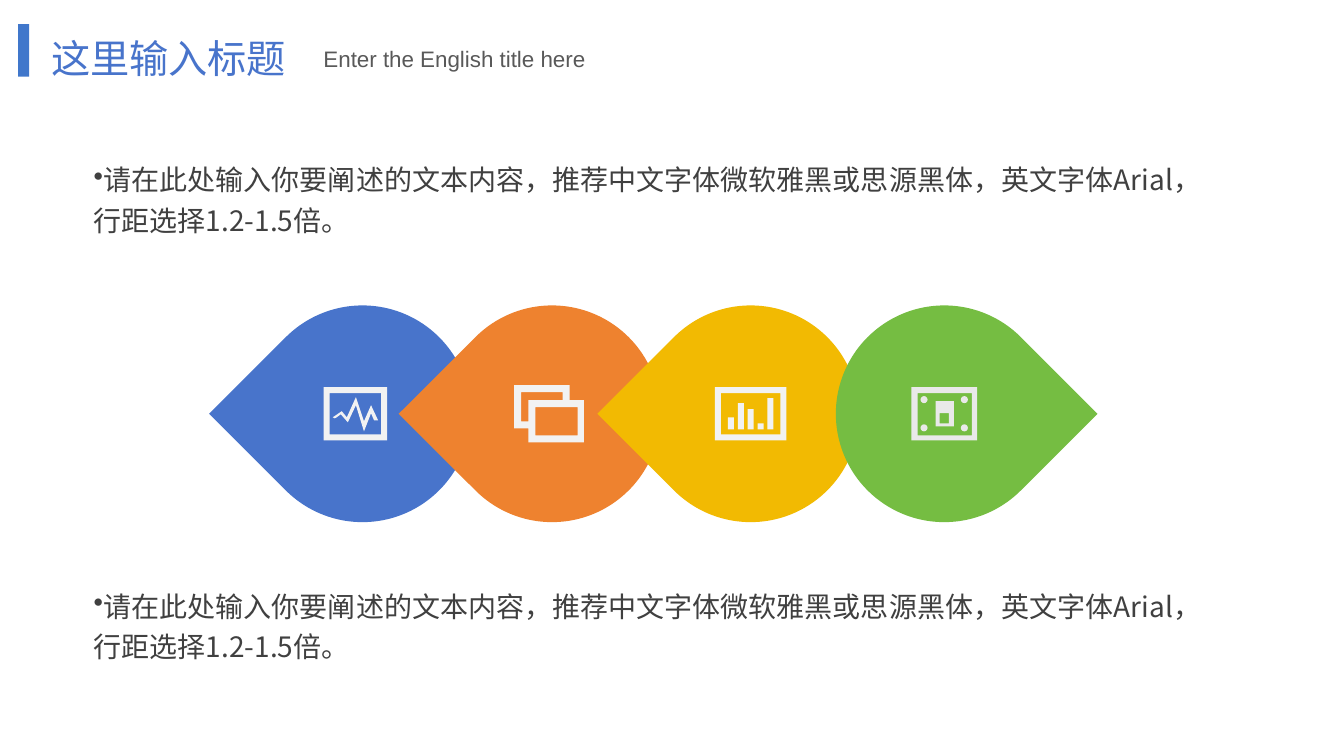
import pptx
import pptx.util
import pptx.dml.color
import pptx.enum.shapes
import pptx.enum.text
import pptx.oxml
import pptx.oxml.ns
from lxml import etree

Inches = pptx.util.Inches
RGBColor = pptx.dml.color.RGBColor
KIND = pptx.enum.shapes.MSO_SHAPE
qn = pptx.oxml.ns.qn

BAR = RGBColor(0x00, 0x4A, 0xBA)
BLUE = RGBColor(0x48, 0x74, 0xCB)
ORANGE = RGBColor(0xEE, 0x82, 0x2F)
YELLOW = RGBColor(0xF2, 0xBA, 0x02)
GREEN = RGBColor(0x75, 0xBD, 0x42)
WHITE = RGBColor(0xF2, 0xF2, 0xF2)
PALE = RGBColor(0xE9, 0xE9, 0xE9)
DARK = RGBColor(0x40, 0x40, 0x40)
GRAY = RGBColor(0x59, 0x59, 0x59)
CJK = "Noto Sans CJK SC"

deck = pptx.Presentation()
deck.slide_width = Inches(13.33)
deck.slide_height = Inches(7.5)
slide = deck.slides.add_slide(deck.slide_layouts[6])
shapes = slide.shapes


def write(text, left, top, width, height, size, color, font=CJK,
          line=None, bullet=None):
    box = shapes.add_textbox(*map(Inches, (left, top, width, height)))
    frame = box.text_frame
    frame.word_wrap = True
    frame.vertical_anchor = pptx.enum.text.MSO_ANCHOR.TOP
    para = frame.paragraphs[0]
    if line:
        para.line_spacing = line
    if bullet:
        props = para._p.get_or_add_pPr()
        props.set("marL", "0")
        props.set("indent", "0")
        etree.SubElement(props, qn("a:buChar"), char=bullet)
    run = para.add_run()
    run.text = text
    run.font.size = pptx.util.Pt(size)
    run.font.name = font
    run.font.color.rgb = color
    etree.SubElement(run._r.get_or_add_rPr(), qn("a:ea"), typeface=font)


def ring(left, top, right, base, edge):
    """Corner points of a frame's outer and inner rectangles."""
    return [[(l, t), (l, b), (r, b), (r, t)] for l, t, r, b in (
        (left, top, right, base),
        (left + edge, top + edge, right - edge, base - edge))]


# Title bar, drops, chart bars and screws: kind, place, colour, turn
solids = [(KIND.RECTANGLE, 0.18, 0.24, 0.11, 0.52, BAR, 0)]
for left, color, turn in ((2.52, BLUE, 225), (4.4, ORANGE, 225),
                          (6.37, YELLOW, 225), (8.29, GREEN, 45)):
    solids.append((KIND.TEAR, left, 3.03, 2.15, 2.15, color, turn))
for i, tall in enumerate((0.12, 0.26, 0.2, 0.06, 0.31)):
    solids.append((KIND.RECTANGLE, 7.22 + 0.098 * i, 4.26 - tall,
                   0.06, tall, WHITE, 0))
for left in (9.13, 9.53):
    for top in (3.93, 4.21):
        solids.append((KIND.OVAL, left, top, 0.07, 0.07, PALE, 0))

for kind, left, top, width, height, color, turn in solids:
    part = shapes.add_shape(kind, *map(Inches, (left, top, width, height)))
    part.shadow.inherit = False
    part.rotation = turn
    part.fill.solid()
    part.fill.fore_color.rgb = color
    part.line.fill.background()
    if color == BAR:
        tint = part.fill._xPr.find(".//" + qn("a:srgbClr"))
        etree.SubElement(tint, qn("a:alpha"), val="75000")

# Icon outlines, in hundredths of an inch
pulse = [(334, 414), (338, 411), (345, 419), (353, 402), (361, 428),
         (368, 410), (371, 417), (375, 417), (368, 402), (361, 418),
         (353, 394), (344, 414), (339, 408), (330, 414), (332, 415)]
back = [[(565, 397), (565, 382), (510, 382), (510, 425), (524, 425),
         (524, 439), (579, 439), (579, 397)],
        [(517, 418), (517, 389), (558, 389), (558, 397), (524, 397),
         (524, 418)]]
pane = [(531, 404), (573, 404), (573, 432), (531, 432)]
core = [[(946, 398), (928, 398), (928, 423), (946, 423)],
        [(941, 420), (932, 420), (932, 410), (941, 410)]]
icons = [([pulse], WHITE), (ring(321, 384, 384, 437, 6), WHITE),
         (back + [pane], WHITE), (ring(709, 384, 780, 437, 6), WHITE),
         (ring(904, 384, 969, 437, 5.5), PALE), (core, PALE)]
for loops, color in icons:
    pen = shapes.build_freeform(*loops[0][0], scale=Inches(0.01))
    pen.add_line_segments(loops[0][1:], close=True)
    for loop in loops[1:]:
        pen.move_to(*loop[0])
        pen.add_line_segments(loop[1:], close=True)
    icon = pen.convert_to_shape()
    icon.shadow.inherit = False
    icon.fill.solid()
    icon.fill.fore_color.rgb = color
    icon.line.fill.background()

# Body text above and below the drops
for top in (1.5, 5.73):
    write("请在此处输入你要阐述的文本内容，推荐中文字体微软雅黑或思源黑体，"
          "英文字体Arial，行距选择1.2-1.5倍。",
          0.83, top, 11.32, 0.91, 20, DARK, line=1.2, bullet="•")

# Titles
write("这里输入标题", 0.41, -0.06, 4.15, 0.92, 28, BLUE, line=1.75)
write("Enter the English title here", 3.11, 0.4, 5.49, 0.37, 16, GRAY,
      font="Arial")

deck.save("out.pptx")
